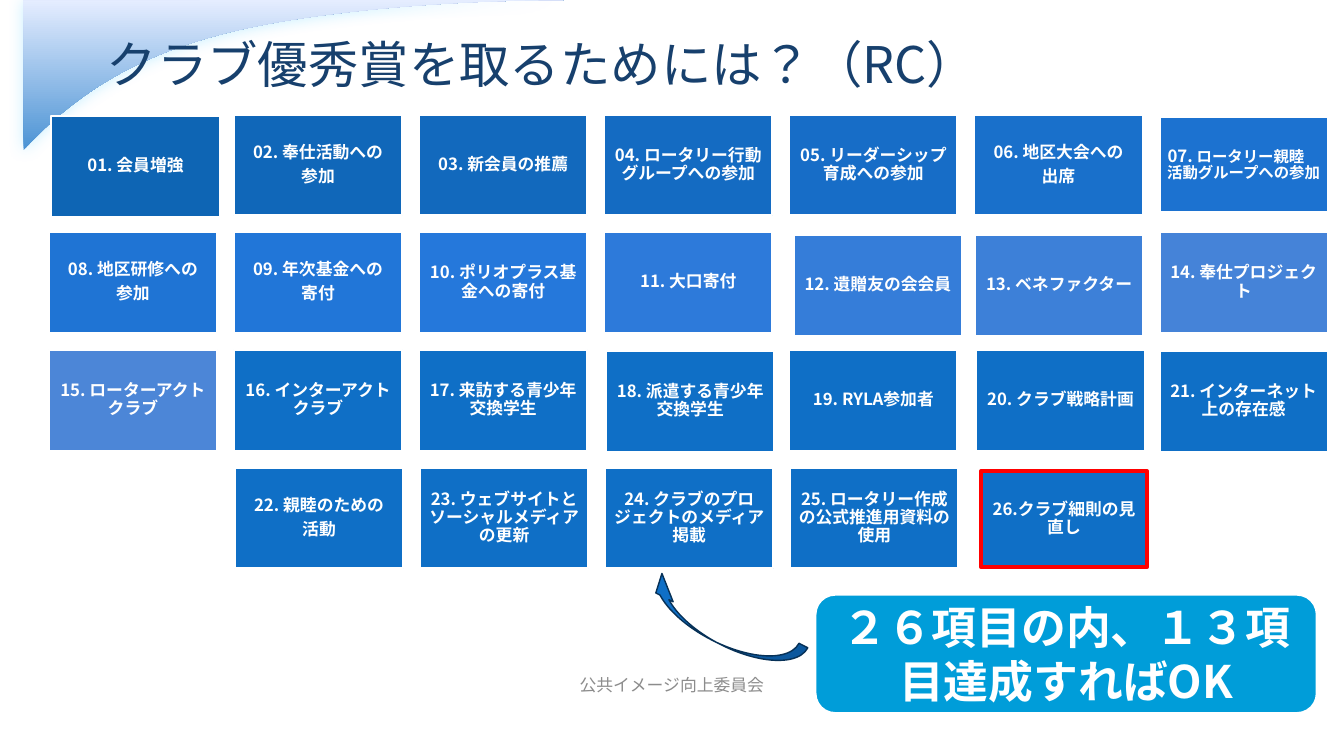
from lxml import etree
from pptx import Presentation
from pptx.dml.color import RGBColor
from pptx.enum.lang import MSO_LANGUAGE_ID
from pptx.enum.shapes import MSO_SHAPE
from pptx.enum.text import MSO_ANCHOR, MSO_AUTO_SIZE, PP_ALIGN
from pptx.oxml.ns import qn
from pptx.util import Cm, Pt

RECT = MSO_SHAPE.RECTANGLE
ROUNDED = MSO_SHAPE.ROUNDED_RECTANGLE
CURVED_ARROW = MSO_SHAPE.CURVED_UP_ARROW
LEFT, CENTER = PP_ALIGN.LEFT, PP_ALIGN.CENTER
MIDDLE, BOTTOM = MSO_ANCHOR.MIDDLE, MSO_ANCHOR.BOTTOM
NO_FIT = MSO_AUTO_SIZE.NONE
JAPANESE = MSO_LANGUAGE_ID.JAPANESE

FONT = "Noto Sans CJK JP"
WHITE, BLUE = "FFFFFF", "0F6FC6"
COLUMNS = 7
GRID_X, GRID_Y = 2.46, 5.77
STEP_X, STEP_Y = 9.33, 5.93
TILE_W, TILE_H = 8.48, 5.08

TILES = [
    ("01. 会員増強", "0E65B4"),
    ("02. 奉仕活動への\n参加", "1067B9"),
    ("03. 新会員の推薦", "1269BD"),
    ("04. ロータリー行動グループへの参加", "146BC2"),
    ("05. リーダーシップ育成への参加", "176DC7"),
    ("06. 地区大会への\n出席", "1970CB"),
    ("07. ", "1C72D0"),
    ("08. 地区研修への\n参加", "1F74D4"),
    ("09. 年次基金への\n寄付", "2176D8"),
    ("10. ポリオプラス基金への寄付", "2578DB"),
    ("11. 大口寄付", "2D7ADA"),
    ("12. 遺贈友の会会員", "357DD9"),
    ("13. ベネファクター", "3D80D8"),
    ("14. 奉仕プロジェクト", "4583D8"),
    ("15. ローターアクトクラブ", "4C86D7"),
    ("16. インターアクトクラブ", BLUE),
    ("17. 来訪する青少年交換学生", BLUE),
    ("18. 派遣する青少年交換学生", BLUE),
    ("19. RYLA参加者", BLUE),
    ("20. クラブ戦略計画", BLUE),
    ("21. インターネット上の存在感", BLUE),
    ("22. 親睦のための\n活動", BLUE),
    ("23. ウェブサイトとソーシャルメディアの更新", BLUE),
    ("24. クラブのプロジェクトのメディア掲載", BLUE),
    ("25. ロータリー作成の公式推進用資料の使用", BLUE),
]
NUDGES = {1: (0.13, 0.08), 12: (0.23, 0.15), 13: (0.03, 0.15),
          18: (0.1, 0.05), 20: (0.1, 0), 21: (0, 0.05)}
TILE_PARAGRAPH = {"alignment": CENTER, "line_spacing": 0.9, "space_after": Pt(8.4)}
SWOOSH_CURVES = [
    [(1.19, 7.57), (2.79, 5.79), (4.72, 4.32), (6.88, 3.28)],
    [(6.88, 3.28), (9.75, 1.88), (12.88, 1.24), (16, 0.81)],
    [(16, 0.81), (20.27, 0.23), (24.59, 0), (28.93, 0)],
]


def rgb(value):
    return RGBColor.from_string(value)


def set_all(obj, values):
    for name, value in values.items():
        setattr(obj, name, value)


def set_frame(tf, margins, anchor):
    sides = ("margin_left", "margin_top", "margin_right", "margin_bottom")
    set_all(tf, {side: Cm(m) for side, m in zip(sides, margins)})
    set_all(tf, {"word_wrap": True, "auto_size": NO_FIT, "vertical_anchor": anchor})


def add_run(p, text, size, color, bold=False):
    r = p.add_run()
    r.text = text
    set_all(r.font, {"name": FONT, "size": Pt(size), "bold": bold,
                     "language_id": JAPANESE})
    r.font.color.rgb = rgb(color)
    rPr = r._r.get_or_add_rPr()
    etree.SubElement(rPr, qn("a:ea")).set("typeface", FONT)


def add_box(s, kind, box, fill, line, width):
    sp = s.shapes.add_shape(kind, *map(Cm, box))
    sp.shadow.inherit = False
    sp.fill.solid()
    sp.fill.fore_color.rgb = rgb(fill)
    sp.line.color.rgb = rgb(line)
    sp.line.width = Pt(width)
    return sp


def add_tile(s, box, text, fill, line=WHITE, width=3):
    sp = add_box(s, RECT, box, fill, line, width)
    tf = sp.text_frame
    set_frame(tf, [0.25] * 4, MIDDLE)
    for i, part in enumerate(text.split("\n")):
        p = tf.add_paragraph() if i else tf.paragraphs[0]
        set_all(p, TILE_PARAGRAPH)
        add_run(p, part, 24, WHITE, True)
    return sp


def add_tiles(s):
    for number, (text, fill) in enumerate(TILES, 1):
        slot = number - 1 if number < 22 else number
        row, column = divmod(slot, COLUMNS)
        dx, dy = NUDGES.get(number, (0.05 if row == 3 else 0, 0))
        x, y = GRID_X + column * STEP_X + dx, GRID_Y + row * STEP_Y + dy
        inset = 0.15 if number == 7 else 0
        sp = add_tile(s, (x, y + inset, TILE_W, TILE_H - 2 * inset), text, fill)
        if number == 7:
            p = sp.text_frame.paragraphs[0]
            add_run(p, "ロータリー親睦　活動グループへの参加", 22, WHITE, True)
    add_tile(s, (49.45, 23.75, 8.36, 4.83), "26.クラブ細則の見直し", BLUE, "FF0000", 6)


def curve_points(curve, steps=24):
    for i in range(1, steps + 1):
        t = i / steps
        weights = ((1 - t) ** 3, 3 * t * (1 - t) ** 2, 3 * t * t * (1 - t), t ** 3)
        yield tuple(Cm(sum(w * pt[axis] for w, pt in zip(weights, curve)))
                    for axis in (0, 1))


def send_to_back(s, sp):
    tree = s.shapes._spTree
    tree.remove(sp._element)
    tree.insert(2, sp._element)


def add_swoosh(s):
    fb = s.shapes.build_freeform(Cm(1.19), Cm(7.57))
    for curve in SWOOSH_CURVES:
        fb.add_line_segments(list(curve_points(curve)), close=False)
    fb.add_line_segments([(Cm(1.17), Cm(0.02))], close=True)
    sp = fb.convert_to_shape()
    sp.line.fill.background()
    sp.fill.gradient()
    sp.fill.gradient_angle = 90
    for stop, color in zip(sp.fill.gradient_stops, ("4B93D4", "E5EDFF")):
        stop.color.rgb = rgb(color)
    sp.shadow.inherit = False
    effects = sp._element.spPr.find(qn("a:effectLst"))
    shadow = etree.SubElement(effects, qn("a:outerShdw"), blurRad=str(Pt(22)),
                              dist=str(Pt(2)), dir="5400000", rotWithShape="0")
    color = etree.SubElement(shadow, qn("a:srgbClr"), val="4FCEFF")
    etree.SubElement(color, qn("a:alpha"), val="30000")
    send_to_back(s, sp)


def add_title(s, text):
    sp = s.shapes.title
    set_all(sp, {"left": Cm(5.28), "top": Cm(0.84), "width": Cm(48.44), "height": Cm(3.96)})
    set_frame(sp.text_frame, [0.1] * 4, BOTTOM)
    p = sp.text_frame.paragraphs[0]
    p.alignment = LEFT
    add_run(p, text, 72, "17406D")


def add_footer(s, text):
    sp = s.shapes.add_textbox(Cm(26.24), Cm(33.48), Cm(15.24), Cm(2.03))
    set_frame(sp.text_frame, (0.51, 0.25, 0.51, 0.25), MIDDLE)
    p = sp.text_frame.paragraphs[0]
    p.alignment = CENTER
    add_run(p, text, 24, "8C8C8C")


def add_callout(s, text):
    sp = add_box(s, ROUNDED, (41.1, 29.97, 25.27, 5.97), "009DD9", WHITE, 3)
    set_frame(sp.text_frame, (0.25, 0.13, 0.25, 0.13), MIDDLE)
    p = sp.text_frame.paragraphs[0]
    p.alignment = CENTER
    add_run(p, text, 64, WHITE, True)


def add_arrow(s):
    sp = add_box(s, CURVED_ARROW, (32.03, 30.56, 8.74, 1.85), BLUE, "073157", 2)
    for i, value in enumerate((0.27, 0.53, 0.55)):
        sp.adjustments[i] = value
    sp.rotation = 207
    sp._element.spPr.xfrm.set("flipV", "1")


def main():
    prs = Presentation()
    set_all(prs, {"slide_width": Cm(67.74), "slide_height": Cm(38.1)})
    s = prs.slides.add_slide(prs.slide_layouts[5])
    add_swoosh(s)
    add_footer(s, "公共イメージ向上委員会")
    add_tiles(s)
    add_title(s, "クラブ優秀賞を取るためには？（RC）")
    add_callout(s, "２６項目の内、１３項目達成すればOK")
    add_arrow(s)
    prs.save("out.pptx")


if __name__ == "__main__":
    main()
